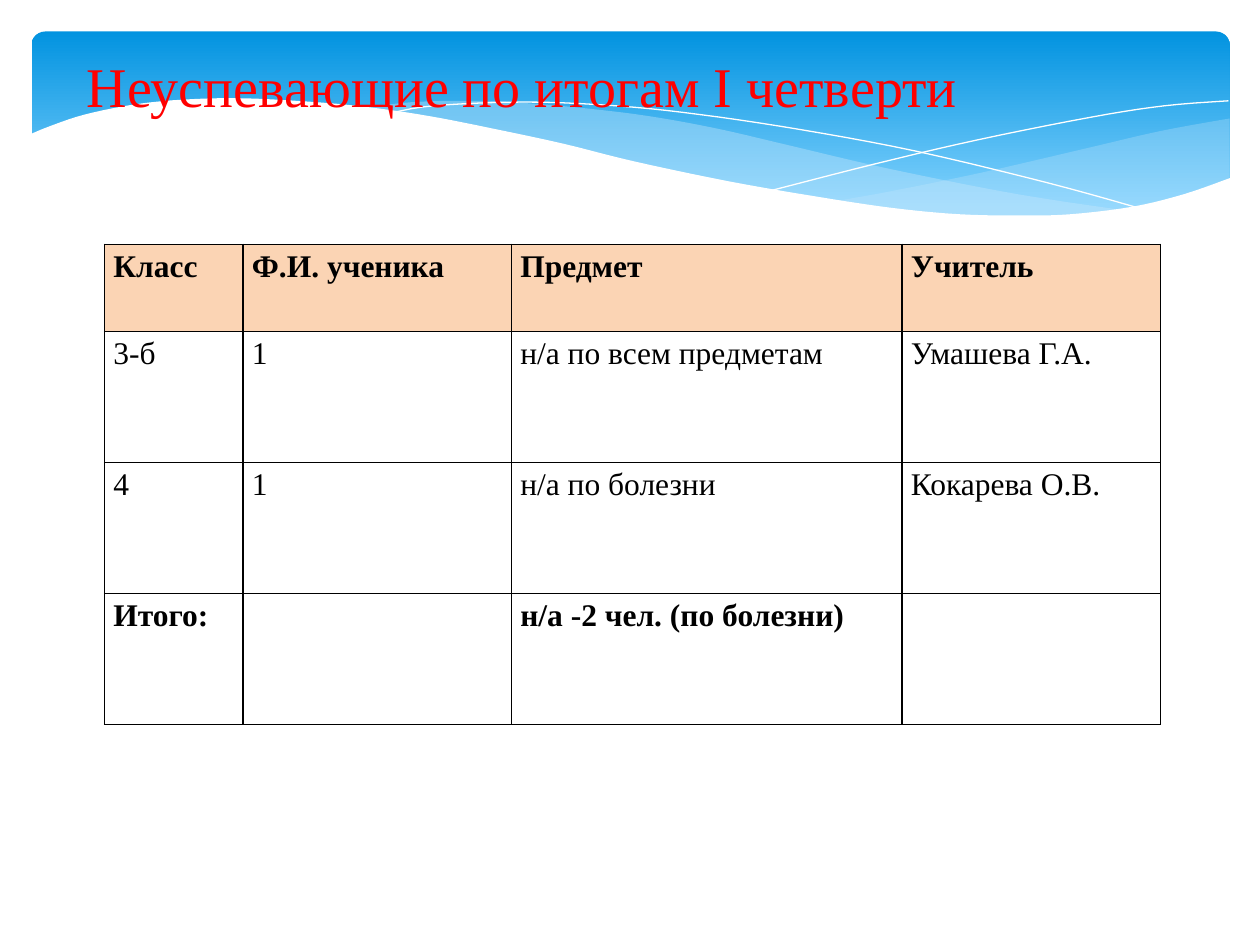
from dataclasses import dataclass

from lxml.etree import SubElement
from pptx import Presentation
from pptx.dml.color import RGBColor
from pptx.enum.shapes import MSO_SHAPE
from pptx.enum.text import MSO_ANCHOR, MSO_AUTO_SIZE, PP_ALIGN
from pptx.oxml.ns import qn
from pptx.util import Inches, Pt


@dataclass(frozen=True)
class Theme:
    font: str = "Times New Roman"
    title_size: int = 32
    cell_size: int = 18
    title: str = "FF0000"
    text: str = "000000"
    border: str = "000000"
    header: str = "FBD4B4"
    band_top: str = "0293E0"
    band_bottom: str = "83D3FE"
    wave: str = "C6E7FC"
    white: str = "FFFFFF"


THEME = Theme()

TITLE = "Неуспевающие по итогам I четверти"
ROWS = [
    ["Класс", "Ф.И. ученика", "Предмет", "Учитель"],
    ["3-б", "1", "н/а по всем предметам", "Умашева Г.А."],
    ["4", "1", "н/а по болезни", "Кокарева О.В."],
    ["Итого:", "", "н/а -2 чел. (по болезни)", ""],
]
BOLD_ROWS = (0, len(ROWS) - 1)
COL_WIDTHS = [1.1, 2.13, 3.1, 2.05]
ROW_HEIGHTS = [0.69, 1.04, 1.04, 1.04]

RIGHT_WAVE = [
    [(9.76, 0.94), (9.21, 1.04), (8.61, 1.18), (7.79, 1.37), (7.06, 1.52), (6.61, 1.6)],
    [(6.61, 1.6), (7.05, 1.65), (7.57, 1.7), (8.14, 1.72), (8.63, 1.7), (9.05, 1.63),
     (9.42, 1.54), (9.76, 1.41)],
]
LONG_WAVE = [
    [(8.93, 1.67), (8.07, 1.54), (7.06, 1.34), (6.29, 1.16), (5.69, 1.02), (5.14, 0.92),
     (4.65, 0.86), (4.2, 0.82), (3.8, 0.8), (3.28, 0.81), (2.86, 0.86)],
    [(2.86, 0.86), (3.42, 0.94), (4.04, 1.06), (4.91, 1.26), (5.66, 1.43), (6.34, 1.56),
     (6.95, 1.65), (7.48, 1.7), (8.07, 1.73), (8.48, 1.72), (8.93, 1.67)],
]
FALLING_LINE = [(3.09, 0.9), (3.44, 0.84), (4.16, 0.81), (4.89, 0.84), (5.56, 0.91),
                (6.36, 1.03), (7.27, 1.2), (8.31, 1.45), (9.07, 1.66)]
RISING_LINE = [(6.13, 1.51), (6.95, 1.3), (7.76, 1.11), (8.66, 0.93), (9.24, 0.84),
               (9.75, 0.8)]
PAGE_EDGE = [(9.77, 1.41), (9.4, 1.54), (8.99, 1.64), (8.5, 1.7), (8.09, 1.71),
             (7.61, 1.7), (7.08, 1.65), (6.48, 1.56), (5.79, 1.44), (5.03, 1.28),
             (4.47, 1.14), (3.91, 1.02), (3.4, 0.92), (2.92, 0.85), (2.5, 0.81),
             (1.93, 0.78), (1.46, 0.79), (1.06, 0.83), (0.67, 0.91), (0.4, 1.0),
             (0.23, 1.07)]
PAGE_CORNERS = [(0.23, 2.24), (9.77, 2.24)]


def rgb(value):
    return RGBColor.from_string(value)


def set_attrs(obj, **values):
    for name, value in values.items():
        setattr(obj, name, value)


def smooth(knots, steps=5):
    """Return points on a Catmull-Rom curve through the knots."""
    padded = [knots[0], *knots, knots[-1]]
    points = []
    for a, b, c, d in zip(padded, padded[1:], padded[2:], padded[3:]):
        for t in (i / steps for i in range(steps)):
            points.append(tuple(
                (2 * q + (r - p) * t + (2 * p - 5 * q + 4 * r - u) * t ** 2
                 + (3 * q - p - 3 * r + u) * t ** 3) / 2
                for p, q, r, u in zip(a, b, c, d)))
    return points + [knots[-1]]


def add_outline(s, points, close):
    start, *rest = [(Inches(x), Inches(y)) for x, y in points]
    builder = s.shapes.build_freeform(*start)
    builder.add_line_segments(rest, close=close)
    sp = builder.convert_to_shape()
    sp.shadow.inherit = False
    return sp


def add_area(s, points, color, alpha=100):
    sp = add_outline(s, points, close=True)
    sp.fill.solid()
    sp.fill.fore_color.rgb = rgb(color)
    sp.line.fill.background()
    if alpha < 100:
        clr = sp.element.spPr.find(qn("a:solidFill"))[0]
        SubElement(clr, qn("a:alpha"), val=str(alpha * 1000))


def add_hairline(s, knots):
    sp = add_outline(s, smooth(knots), close=False)
    sp.fill.background()
    sp.line.color.rgb = rgb(THEME.white)
    sp.line.width = Pt(0)


def add_band(s):
    sp = s.shapes.add_shape(MSO_SHAPE.ROUNDED_RECTANGLE, Inches(0.25), Inches(0.25),
                            Inches(9.51), Inches(1.56))
    sp.adjustments[0] = 0.07
    sp.shadow.inherit = False
    sp.line.fill.background()
    sp.fill.gradient()
    sp.fill.gradient_angle = 270
    stops = [(0, THEME.band_top), (0.9, THEME.band_bottom)]
    for stop, (position, color) in zip(sp.fill.gradient_stops, stops):
        stop.position = position
        stop.color.rgb = rgb(color)


def add_header_art(s):
    add_band(s)
    for curves, alpha in ((RIGHT_WAVE, 29), (LONG_WAVE, 40)):
        add_area(s, [pt for curve in curves for pt in smooth(curve)], THEME.wave, alpha)
    for knots in (FALLING_LINE, RISING_LINE):
        add_hairline(s, knots)
    add_area(s, smooth(PAGE_EDGE) + PAGE_CORNERS, THEME.white)


def write(p, text, size, color, bold=False):
    r = p.add_run()
    r.text = text
    set_attrs(r.font, name=THEME.font, size=Pt(size), bold=bold)
    r.font.color.rgb = rgb(color)


def place_title(s):
    """Format the title and bring it in front of the header art."""
    sp = s.shapes.title
    set_attrs(sp, left=Inches(0.59), top=Inches(0.36),
              width=Inches(7.18), height=Inches(0.64))
    tf = sp.text_frame
    set_attrs(tf, word_wrap=False, vertical_anchor=MSO_ANCHOR.TOP,
              auto_size=MSO_AUTO_SIZE.SHAPE_TO_FIT_TEXT)
    p = tf.paragraphs[0]
    p.alignment = PP_ALIGN.LEFT
    write(p, TITLE, THEME.title_size, THEME.title)
    sp.element.getparent().append(sp.element)


def set_borders(cell):
    tc_pr = cell._tc.get_or_add_tcPr()
    for i, side in enumerate(("lnL", "lnR", "lnT", "lnB")):
        ln = tc_pr.makeelement(qn(f"a:{side}"), {"w": str(Pt(1))})
        fill = SubElement(ln, qn("a:solidFill"))
        SubElement(fill, qn("a:srgbClr"), val=THEME.border)
        tc_pr.insert(i, ln)


def fill_cell(cell, text, header, bold):
    set_attrs(cell, margin_left=Inches(0.07), margin_right=Inches(0.07),
              margin_top=0, margin_bottom=0)
    if header:
        cell.fill.solid()
        cell.fill.fore_color.rgb = rgb(THEME.header)
    else:
        cell.fill.background()
    set_borders(cell)
    if text:
        p = cell.text_frame.paragraphs[0]
        p.line_spacing = 1.15
        write(p, text, THEME.cell_size, THEME.text, bold)


def add_results_table(s):
    table = s.shapes.add_table(len(ROWS), len(COL_WIDTHS), Inches(0.83), Inches(1.94),
                               Inches(sum(COL_WIDTHS)), Inches(sum(ROW_HEIGHTS))).table
    for column, width in zip(table.columns, COL_WIDTHS):
        column.width = Inches(width)
    for i, (row, height) in enumerate(zip(table.rows, ROW_HEIGHTS)):
        row.height = Inches(height)
        for cell, text in zip(row.cells, ROWS[i]):
            fill_cell(cell, text, header=i == 0, bold=i in BOLD_ROWS)


def main():
    prs = Presentation()
    set_attrs(prs, slide_width=Inches(10), slide_height=Inches(7.5))
    s = prs.slides.add_slide(prs.slide_layouts[5])
    add_header_art(s)
    place_title(s)
    add_results_table(s)
    prs.save("out.pptx")


if __name__ == "__main__":
    main()
